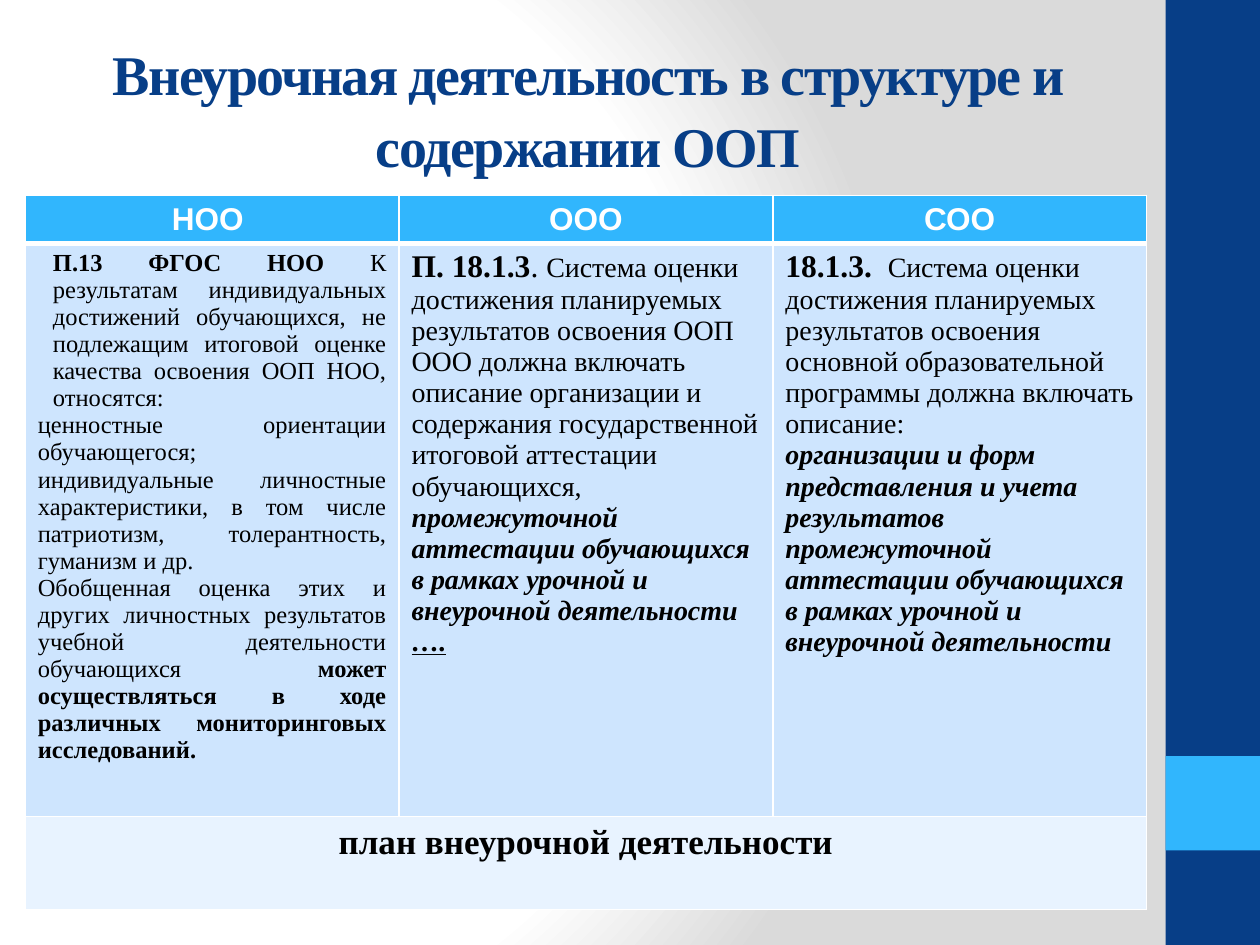
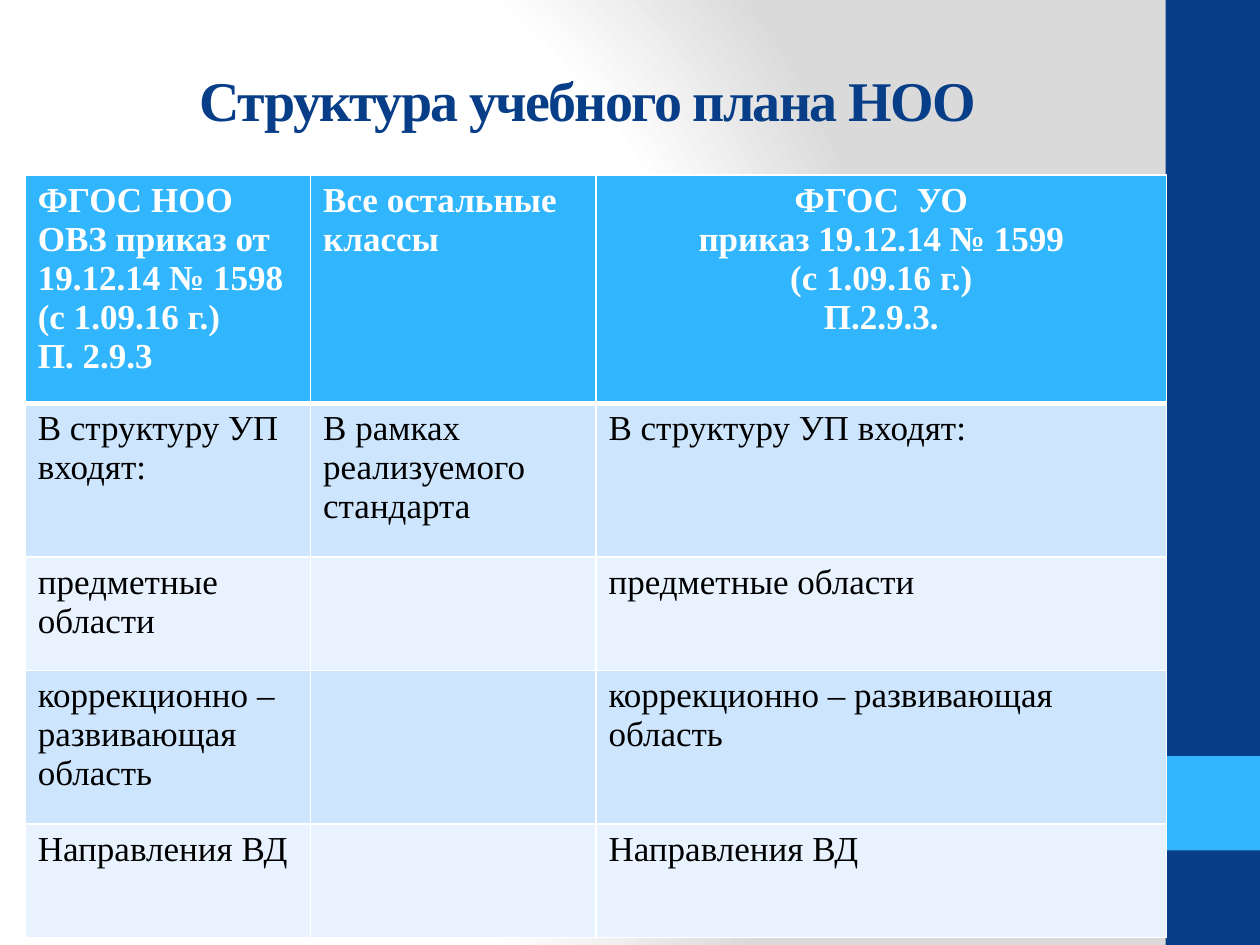
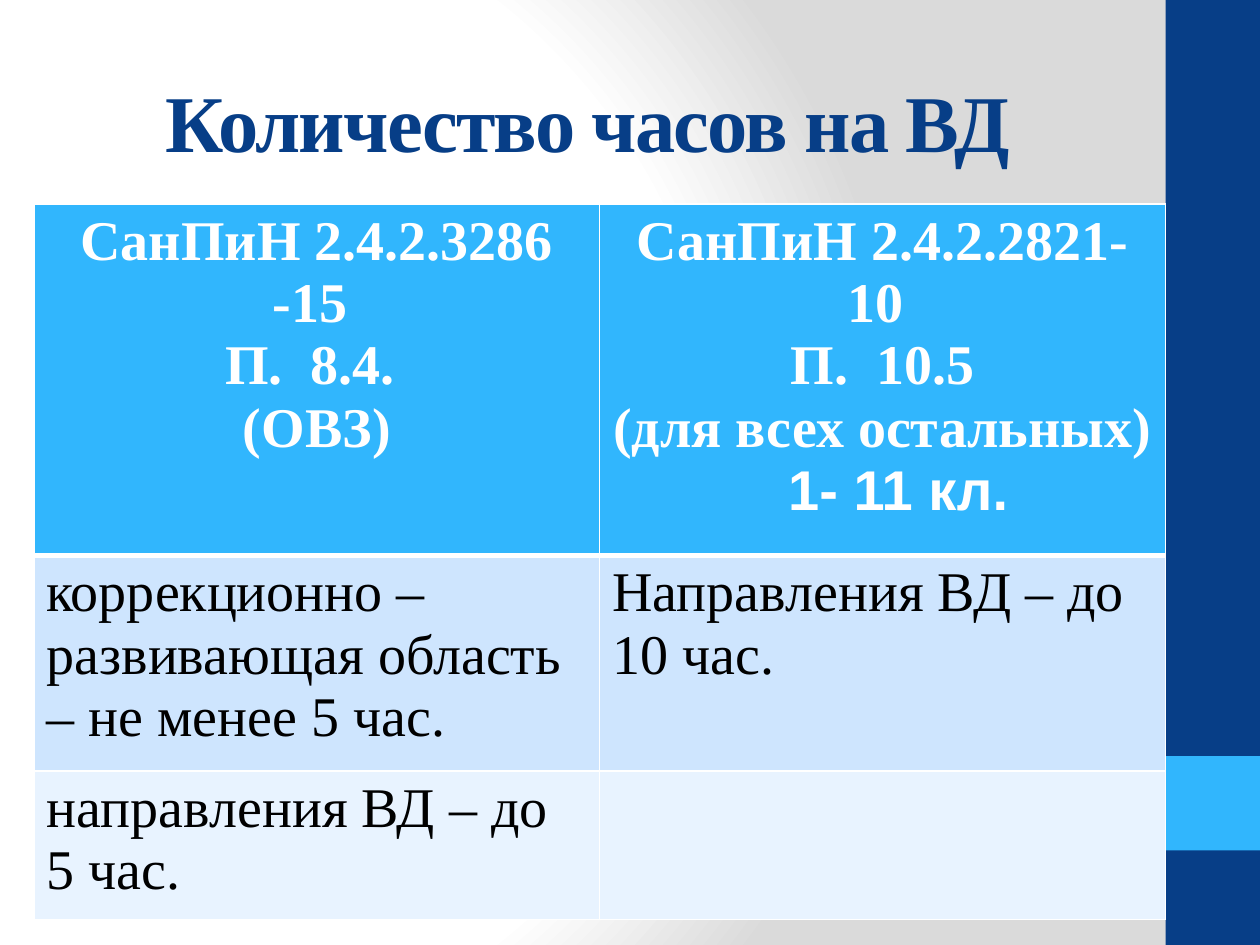
from dataclasses import dataclass, field
from typing import Any

from lxml.etree import SubElement
from pptx import Presentation
from pptx.dml.color import RGBColor as RGB
from pptx.enum.shapes import MSO_SHAPE as Shape
from pptx.enum.text import MSO_ANCHOR as Anchor, MSO_AUTO_SIZE as AutoSize, PP_ALIGN as Align
from pptx.oxml import parse_xml
from pptx.oxml.ns import nsdecls, qn
from pptx.util import Inches, Pt


@dataclass(frozen=True)
class Theme:
    navy: str = "073E87"
    sky: str = "31B6FD"
    odd_row: str = "CEE5FE"
    even_row: str = "E8F3FF"
    white: str = "FFFFFF"
    black: str = "000000"
    grey: str = "DADADA"
    serif: str = "Times New Roman"
    sans: str = "Arial"
    note: int = 14
    body: int = 16
    lead: int = 18
    text: int = 20
    large: int = 32
    huge: int = 46
    rule: int = 1
    head_rule: int = 3


T = Theme()


@dataclass
class Run:
    text: str
    fmt: dict[str, Any] = field(default_factory=dict)


@dataclass
class Para:
    runs: list[Run]
    align: Align | None = None
    indent: float = 0


Cell = list[Para]


@dataclass
class Grid:
    left: float
    top: float
    width: float
    weights: list[int]
    heights: list[float]
    size: int
    cells: list[list[Cell]]
    merge_last: bool = False


@dataclass
class Page:
    title: str
    title_size: int
    title_height: float
    grid: Grid


@dataclass
class Band:
    top: float
    height: float
    color: str


BANDS = [Band(0, 7.5, T.navy), Band(6, 0.75, T.sky)]


def lines(*texts: str, align: Align | None = None) -> Cell:
    return [Para([Run(text)], align) for text in texts]


def centred(*texts: str) -> Cell:
    return lines(*texts, align=Align.CENTER)


def add_run(p, run: Run, base: dict[str, Any], color: str):
    r = p.add_run()
    r.text = run.text.rstrip("\n")
    for name, value in {**base, **run.fmt}.items():
        setattr(r.font, name, value)
    r.font.color.rgb = RGB.from_string(color)
    if run.text.endswith("\n"):
        p.add_line_break()
    return r


# Shared background and side bands
def style_master(prs, slide) -> None:
    master = prs.slide_master
    fill = master.background.fill
    fill.solid()
    solid = master.element.find(".//" + qn("p:bgPr")).find(qn("a:solidFill"))
    stops = "".join(
        f'<a:gs pos="{pos}"><a:srgbClr val="{color}"/></a:gs>'
        for pos, color in ((0, T.white), (75000, T.white), (100000, T.grey)))
    solid.getparent().replace(solid, parse_xml(
        f'<a:gradFill rotWithShape="1" {nsdecls("a")}><a:gsLst>{stops}</a:gsLst>'
        '<a:path path="circle"><a:fillToRect l="20000" t="50000" r="100000" b="50000"/>'
        '</a:path></a:gradFill>'))

    for i, band in enumerate(BANDS):
        sp = slide.shapes.add_shape(Shape.RECTANGLE, Inches(9.25), Inches(band.top),
                                    Inches(0.75), Inches(band.height))
        sp.shadow.inherit = False
        sp.fill.solid()
        sp.fill.fore_color.rgb = RGB.from_string(band.color)
        sp.line.fill.background()
        sp.name = f"Side band {i + 1}"
        sp.element.nvSpPr.cNvPr.set("id", str(100 + i))
        master.shapes.element.insert(2 + i, sp.element)


def add_title(slide, page: Page) -> None:
    sp = slide.shapes.title
    box = {"left": 0.5, "top": 0.3, "width": 8.33, "height": page.title_height}
    for name, value in box.items():
        setattr(sp, name, Inches(value))
    tf = sp.text_frame
    tf.word_wrap = True
    tf.auto_size = AutoSize.NONE
    tf.vertical_anchor = Anchor.MIDDLE
    p = tf.paragraphs[0]
    p.alignment = Align.CENTER
    p.line_spacing = 1.08
    base = {"name": T.serif, "size": Pt(page.title_size), "bold": True}
    r = add_run(p, Run(page.title), base, T.navy)
    r._r.get_or_add_rPr().set("spc", "-100")


def set_borders(cell, row: int) -> None:
    tc_pr = cell._tc.get_or_add_tcPr()
    for side in "LRTB":
        thick = (side, row) in (("B", 0), ("T", 1))
        width = Pt(T.head_rule if thick else T.rule)
        ln = SubElement(tc_pr, qn(f"a:ln{side}"), w=str(width))
        SubElement(SubElement(ln, qn("a:solidFill")), qn("a:srgbClr"), val=T.white)


def fill_cell(cell, content: Cell, row: int, size: int) -> None:
    head = row == 0
    set_borders(cell, row)
    cell.fill.solid()
    color = T.sky if head else T.odd_row if row % 2 else T.even_row
    cell.fill.fore_color.rgb = RGB.from_string(color)
    base = {"name": T.serif, "size": Pt(size), "bold": head}
    tf = cell.text_frame
    for i, para in enumerate(content):
        p = tf.add_paragraph() if i else tf.paragraphs[0]
        p.alignment = para.align
        if para.indent:
            p._p.get_or_add_pPr().set("marL", str(Inches(para.indent)))
        for run in para.runs:
            add_run(p, run, base, T.white if head else T.black)


def add_grid(slide, grid: Grid) -> None:
    table = slide.shapes.add_table(
        len(grid.heights), len(grid.weights), Inches(grid.left), Inches(grid.top),
        Inches(grid.width), Inches(sum(grid.heights))).table
    table.horz_banding = False
    for column, weight in zip(table.columns, grid.weights):
        column.width = Inches(grid.width * weight / sum(grid.weights))
    for i, (height, contents) in enumerate(zip(grid.heights, grid.cells)):
        table.rows[i].height = Inches(height)
        for j, content in enumerate(contents):
            fill_cell(table.cell(i, j), content, i, grid.size)
    if grid.merge_last:
        last = len(grid.heights) - 1
        table.cell(last, 0).merge(table.cell(last, len(grid.weights) - 1))


# Run formats
HEAD = {"name": T.sans, "size": Pt(T.lead)}
NOTE = {"size": Pt(T.note)}
NOTE_BOLD = {**NOTE, "bold": True}
LEAD = {"size": Pt(T.lead)}
LEAD_BOLD = {**LEAD, "bold": True}
STRESS = {"bold": True, "italic": True}
CLOSING = {"size": Pt(T.text), "bold": True}

# Slide contents
PROGRAMME = Grid(0.2, 1.55, 8.9, [1, 1, 1], [0.38, 4.55, 0.74], T.body, [
    [[Para([Run(level, HEAD)], Align.CENTER)] for level in ("НОО ", "ООО", "СОО")],
    [
        [
            Para([Run("П.13 ФГОС НОО ", NOTE_BOLD),
                  Run("К результатам индивидуальных достижений обучающихся, не подлежащим "
                      "итоговой оценке качества освоения ООП НОО, относятся:", NOTE)],
                 Align.JUSTIFY, 0.12),
            Para([Run("ценностные ориентации обучающегося;", NOTE)], Align.JUSTIFY),
            Para([Run("индивидуальные личностные характеристики, в том числе патриотизм, "
                      "толерантность, гуманизм и др.", NOTE)], Align.JUSTIFY),
            Para([Run("Обобщенная оценка этих и других личностных результатов учебной "
                      "деятельности обучающихся ", NOTE),
                  Run("может осуществляться в ходе различных мониторинговых исследований.",
                      NOTE_BOLD)], Align.JUSTIFY),
        ],
        [Para([
            Run("П. 18.1.3", LEAD_BOLD),
            Run(". ", LEAD),
            Run("Система оценки достижения планируемых результатов освоения ООП ООО должна "
                "включать описание организации и содержания государственной итоговой "
                "аттестации обучающихся, "),
            Run("промежуточной аттестации обучающихся в рамках урочной и внеурочной "
                "деятельности", STRESS),
            Run(" ….", {**STRESS, "underline": True}),
        ])],
        [Para([
            Run("18.1.3.  ", LEAD_BOLD),
            Run("Система оценки достижения планируемых результатов освоения основной "
                "образовательной программы должна включать описание:\n"),
            Run("организации и форм представления и учета результатов промежуточной "
                "аттестации обучающихся в рамках урочной и внеурочной деятельности", STRESS),
        ])],
    ],
    [[Para([Run("план внеурочной деятельности", CLOSING)], Align.CENTER)], [], []],
], merge_last=True)

CURRICULUM = Grid(0.2, 1.39, 9.06, [1, 1, 2], [1.81, 1.22, 0.9, 1.22, 0.9], T.text, [
    [
        lines("ФГОС НОО ОВЗ приказ от 19.12.14 № 1598", "(с 1.09.16 г.)", "П. 2.9.3"),
        lines("Все остальные", "классы"),
        centred("ФГОС  УО", "приказ 19.12.14 № 1599", "(с 1.09.16 г.)", "П.2.9.3."),
    ],
    *[[lines(part), lines(other) if other else [], lines(part)] for part, other in (
        ("В структуру УП входят:", "В рамках реализуемого стандарта"),
        ("предметные области", ""),
        ("коррекционно – развивающая область", ""),
        ("Направления ВД", ""),
    )],
])

HOURS = Grid(0.27, 1.62, 8.98, [1, 1], [2.79, 1.71, 1.18], T.large, [
    [
        centred("СанПиН 2.4.2.3286 -15 ", "П.  8.4. ", "(ОВЗ)"),
        centred("СанПиН 2.4.2.2821-10 ", "П.  10.5", "(для всех остальных)")
        + [Para([Run("1- 11 кл.", {"name": T.sans})], Align.CENTER, 0.25)],
    ],
    [lines("коррекционно – развивающая область – не менее 5 час."),
     lines("Направления ВД – до 10 час.")],
    [lines("направления ВД – до 5 час."), []],
])

PAGES = [
    Page("Внеурочная деятельность в структуре и содержании ООП", T.large, 1.09, PROGRAMME),
    Page("Структура учебного плана НОО", T.large, 0.93, CURRICULUM),
    Page("Количество часов на ВД", T.huge, 1.25, HOURS),
]


def main() -> None:
    prs = Presentation()
    prs.slide_width, prs.slide_height = Inches(10), Inches(7.5)
    title_only = prs.slide_layouts[5]
    for i, page in enumerate(PAGES):
        slide = prs.slides.add_slide(title_only)
        if i == 0:
            style_master(prs, slide)
        add_title(slide, page)
        add_grid(slide, page.grid)
    prs.save("out.pptx")


if __name__ == "__main__":
    main()
